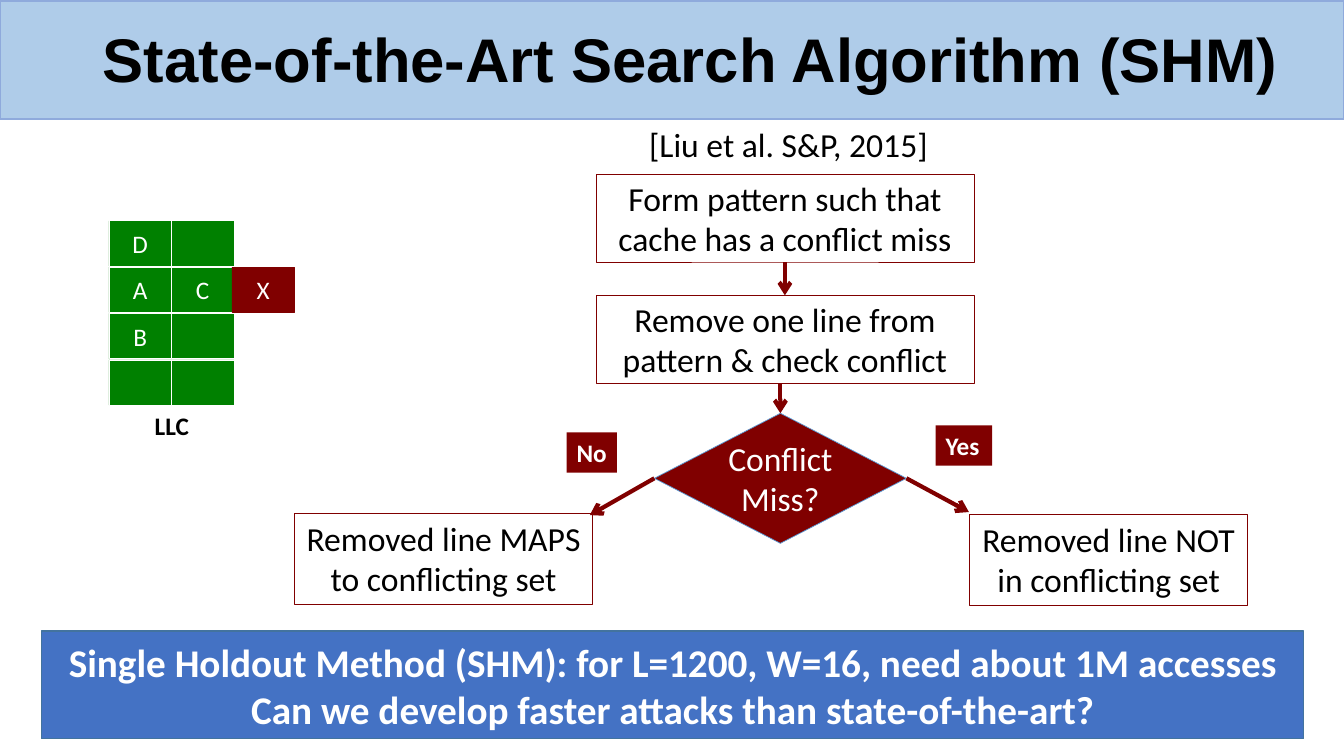
"""Build the slide on the single holdout search algorithm."""
from lxml.etree import SubElement
from pptx import Presentation
from pptx.dml.color import RGBColor
from pptx.enum.shapes import MSO_CONNECTOR, MSO_SHAPE
from pptx.enum.text import MSO_ANCHOR, PP_ALIGN
from pptx.oxml.ns import qn
from pptx.util import Inches, Pt

COLORS = {
    "band": "AFCCE9", "band_line": "8FAADC", "green": "008000",
    "maroon": "800000", "white": "FFFFFF", "black": "000000",
    "blue": "4472C4", "blue_line": "43739E", "diamond_line": "5B9BD5",
}
TITLE = "State-of-the-Art Search Algorithm (SHM)"
CITATION = "[Liu et al. S&P, 2015]"
BANNER = ("Single Holdout Method (SHM): for L=1200, W=16, need about 1M accesses "
          "Can we develop faster attacks than state-of-the-art?")
CACHE_ROWS = [("D", ""), ("A", "C"), ("B", ""), ("", "")]
CACHE_LEFT, CACHE_TOP, CELL_WIDTH, CELL_HEIGHT, ROW_STEP = 1.08, 2.19, 0.62, 0.45, 0.46
STEPS = [
    ("Form pattern such that cache has a conflict miss", 1.73),
    ("Remove one line from pattern & check conflict", 2.93),
]
OUTCOMES = [
    ("Removed line MAPS\nto conflicting set", (2.92, 5.09, 2.96, 0.91),
     "No", (5.62, 4.29, 0.5, 0.4), 1, (5.85, 5.11)),
    ("Removed line NOT\nin conflicting set", (9.62, 5.1, 2.75, 0.91),
     "Yes", (9.28, 4.22, 0.56, 0.4), 3, (9.61, 5.08)),
]


def color(name):
    return RGBColor.from_string(COLORS[name])


def write(box, text, size=24, ink="black", bold=False, font="Calibri",
          align=PP_ALIGN.CENTER, anchor=MSO_ANCHOR.MIDDLE, wrap=True, spacing=None):
    frame = box.text_frame
    frame.text = text
    frame.word_wrap = wrap
    frame.vertical_anchor = anchor
    for para in frame.paragraphs:
        para.alignment = align
        para.line_spacing = spacing
        for span in para.runs:
            span.font.name = font
            span.font.size = Pt(size)
            span.font.bold = bold
            span.font.color.rgb = color(ink)


def add_box(page, place, fill=None, line=None, width=0.5, kind=MSO_SHAPE.RECTANGLE):
    box = page.shapes.add_shape(kind, *map(Inches, place))
    box.shadow.inherit = False
    if fill:
        box.fill.solid()
        box.fill.fore_color.rgb = color(fill)
    else:
        box.fill.background()
    if line:
        box.line.color.rgb = color(line)
        box.line.width = Pt(width)
    else:
        box.line.fill.background()
    return box


def add_label(page, place, text, **style):
    label = page.shapes.add_textbox(*map(Inches, place))
    write(label, text, anchor=MSO_ANCHOR.TOP, wrap=False, **style)


def add_arrow(page, start, end):
    arrow = page.shapes.add_connector(
        MSO_CONNECTOR.STRAIGHT, *map(Inches, start + end))
    arrow.line.color.rgb = color("maroon")
    arrow.line.width = Pt(3)
    SubElement(arrow.line._get_or_add_ln(), qn("a:tailEnd"), type="arrow")
    SubElement(arrow._element.spPr, qn("a:effectLst"))
    return arrow


def draw_heading(page):
    band = add_box(page, (0, 0.01, 13.33, 1.17), "band", "band_line", 1)
    page.shapes._spTree.insert(2, band._element)
    title = page.shapes.title
    title.left, title.top, title.width, title.height = map(Inches, (0.92, 0.23, 12.02, 0.78))
    write(title, TITLE, size=44, bold=True, font="Arial", align=PP_ALIGN.LEFT, spacing=0.9)


def draw_cache(page):
    for row, names in enumerate(CACHE_ROWS):
        for column, name in enumerate(names):
            place = (CACHE_LEFT + column * CELL_WIDTH, CACHE_TOP + row * ROW_STEP,
                     CELL_WIDTH, CELL_HEIGHT)
            cell = add_box(page, place, "green", "white")
            if name:
                write(cell, name, size=18, ink="white")
    add_label(page, (1.43, 4.02, 0.55, 0.4), "LLC", size=18, bold=True)
    evicted = add_box(page, (2.3, CACHE_TOP + ROW_STEP, CELL_WIDTH, CELL_HEIGHT),
                      "maroon", "maroon")
    write(evicted, "X", size=18, ink="white")


def draw_flow(page):
    add_label(page, (6.34, 1.18, 3.04, 0.5), CITATION, align=PP_ALIGN.LEFT)
    steps = []
    for text, top in STEPS:
        step = add_box(page, (5.91, top, 3.75, 0.87), line="maroon")
        write(step, text)
        steps.append(step)
    down = add_arrow(page, (7.79, 2.6), (7.79, 2.93))
    down.begin_connect(steps[0], 2)
    down.end_connect(steps[1], 0)

    question = add_box(page, (6.49, 4.1, 2.5, 1.29), "maroon", "diamond_line",
                       kind=MSO_SHAPE.DIAMOND)
    write(question, "Conflict Miss?", ink="white")
    add_arrow(page, (7.74, 3.8), (7.74, 4.1)).end_connect(question, 0)

    for text, place, answer, answer_place, side, tip in OUTCOMES:
        outcome = add_box(page, place, line="maroon", width=0.75)
        write(outcome, text, anchor=MSO_ANCHOR.TOP, wrap=False)
        tag = add_box(page, answer_place, "maroon")
        write(tag, answer, size=18, ink="white", bold=True, align=PP_ALIGN.LEFT,
              anchor=MSO_ANCHOR.TOP, wrap=False)
        add_arrow(page, (7.74, 4.75), tip).begin_connect(question, side)


def main():
    deck = Presentation()
    deck.slide_width, deck.slide_height = Inches(13.33), Inches(7.5)
    page = deck.slides.add_slide(deck.slide_layouts[5])
    draw_heading(page)
    draw_cache(page)
    draw_flow(page)
    banner = add_box(page, (0.41, 6.26, 12.52, 1.07), "blue", "blue_line", 1)
    write(banner, BANNER, size=28, ink="white", bold=True)
    deck.save("out.pptx")


if __name__ == "__main__":
    main()
